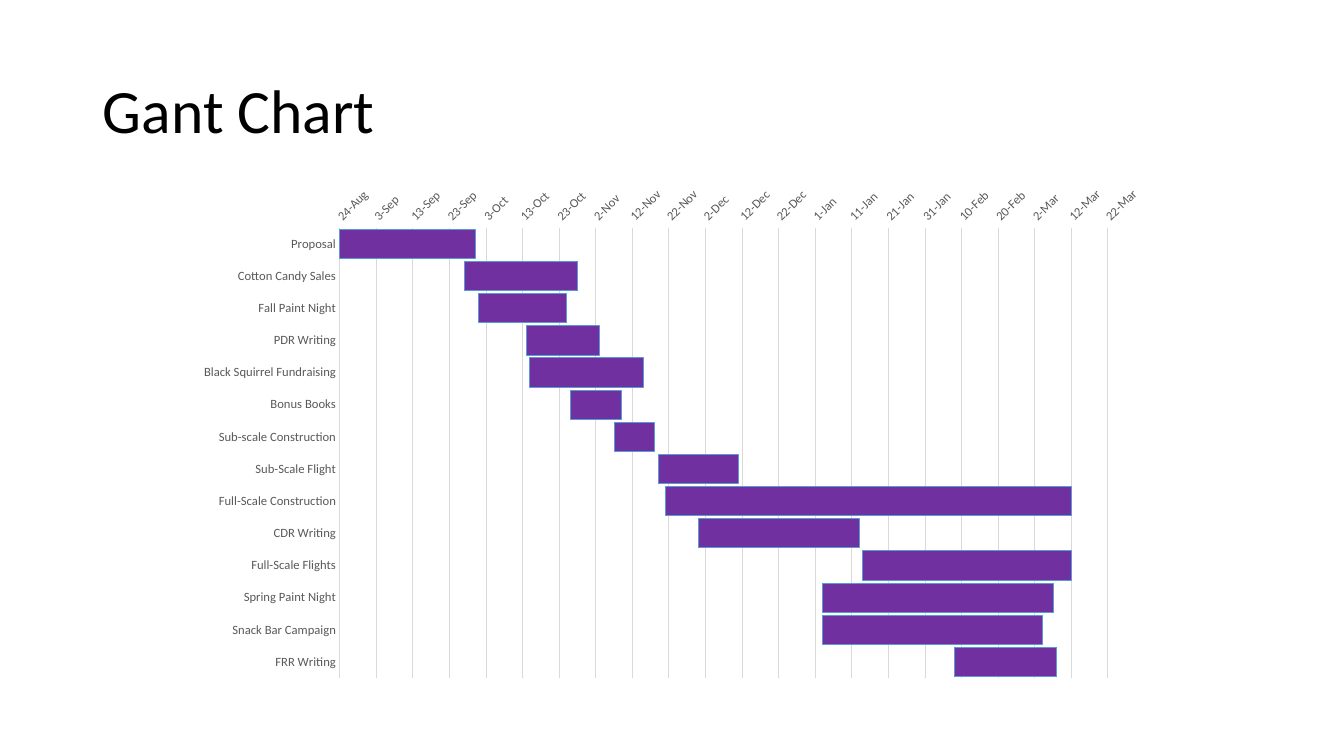
"""Build a one-slide Gantt chart of project tasks."""
from dataclasses import dataclass

from pptx import Presentation
from pptx.chart.data import CategoryChartData as Data
from pptx.dml.color import RGBColor as RGB
from pptx.enum.chart import XL_CHART_TYPE as Kind, XL_TICK_MARK as Tick
from pptx.enum.text import MSO_ANCHOR as Anchor, PP_ALIGN as Align
from pptx.util import Inches, Pt


@dataclass(frozen=True)
class Theme:
    face: str = "Calibri"
    ink: str = "000000"
    label: str = "595959"
    grid: str = "D9D9D9"
    bar: str = "7030A0"
    edge: str = "5B9BD5"
    head: float = 44
    base: float = 10
    small: float = 9
    line: float = 0.75


START = 42606
TASKS = [
    ("Proposal", 42606, 37),
    ("Cotton Candy Sales", 42640, 31),
    ("Fall Paint Night", 42644, 24),
    ("PDR Writing", 42657, 20),
    ("Black Squirrel Fundraising", 42658, 31),
    ("Bonus Books", 42669, 14),
    ("Sub-scale Construction", 42681, 11),
    ("Sub-Scale Flight", 42693, 22),
    ("Full-Scale Construction", 42695, 111),
    ("CDR Writing", 42704, 44),
    ("Full-Scale Flights", 42749, 57),
    ("Spring Paint Night", 42738, 63),
    ("Snack Bar Campaign", 42738, 60),
    ("FRR Writing", 42774, 28),
]


class Deck:
    def __init__(self, theme):
        self.theme = theme
        self.deck = Presentation()
        self.deck.slide_width = Inches(13.33)
        self.deck.slide_height = Inches(7.5)
        self.slide = self.deck.slides.add_slide(self.deck.slide_layouts[5])

    def font(self, font, size, color):
        font.name = self.theme.face
        font.size = Pt(size)
        font.color.rgb = RGB.from_string(color)

    def stroke(self, line, color):
        line.color.rgb = RGB.from_string(color)
        line.width = Pt(self.theme.line)

    def title(self, text, box):
        shape = self.slide.shapes.title
        shape.left, shape.top, shape.width, shape.height = map(Inches, box)
        frame = shape.text_frame
        frame.text = text
        frame.vertical_anchor = Anchor.MIDDLE
        para = frame.paragraphs[0]
        para.alignment = Align.LEFT
        para.line_spacing = 0.9
        self.font(para.font, self.theme.head, self.theme.ink)

    def axis(self, axis):
        axis.major_tick_mark = axis.minor_tick_mark = Tick.NONE
        self.font(axis.tick_labels.font, self.theme.small, self.theme.label)

    def gantt(self, tasks, start, box):
        names, starts, days = zip(*tasks)
        data = Data()
        data.categories = names
        data.add_series("Series 1", starts)
        data.add_series("Series 2", days)
        frame = self.slide.shapes.add_chart(
            Kind.BAR_STACKED, *map(Inches, box), data)
        chart = frame.chart
        chart.has_title = chart.has_legend = False
        self.font(chart.font, self.theme.base, self.theme.ink)

        plot = chart.plots[0]
        plot.gap_width, plot.overlap = 10, 100
        plot.vary_by_categories = False
        blank, bars = plot.series
        blank.format.fill.background()
        blank.format.line.fill.background()
        bars.format.fill.solid()
        bars.format.fill.fore_color.rgb = RGB.from_string(self.theme.bar)
        self.stroke(bars.format.line, self.theme.edge)

        rows, dates = chart.category_axis, chart.value_axis
        self.axis(rows)
        rows.reverse_order = True
        rows.has_major_gridlines = False
        self.stroke(rows.format.line, self.theme.grid)

        self.axis(dates)
        dates.minimum_scale, dates.major_unit = start, 10
        dates.has_major_gridlines = True
        self.stroke(dates.major_gridlines.format.line, self.theme.grid)
        dates.format.line.fill.background()
        dates.tick_labels.number_format = "d\\-mmm"
        dates.tick_labels.number_format_is_linked = False
        dates._element.txPr.bodyPr.set("rot", "-2700000")


def main():
    deck = Deck(Theme())
    deck.title("Gant Chart", (0.92, 0.4, 11.5, 1.45))
    deck.gantt(TASKS, START, (1.83, 1.75, 9.67, 5.08))
    deck.deck.save("out.pptx")


if __name__ == "__main__":
    main()
